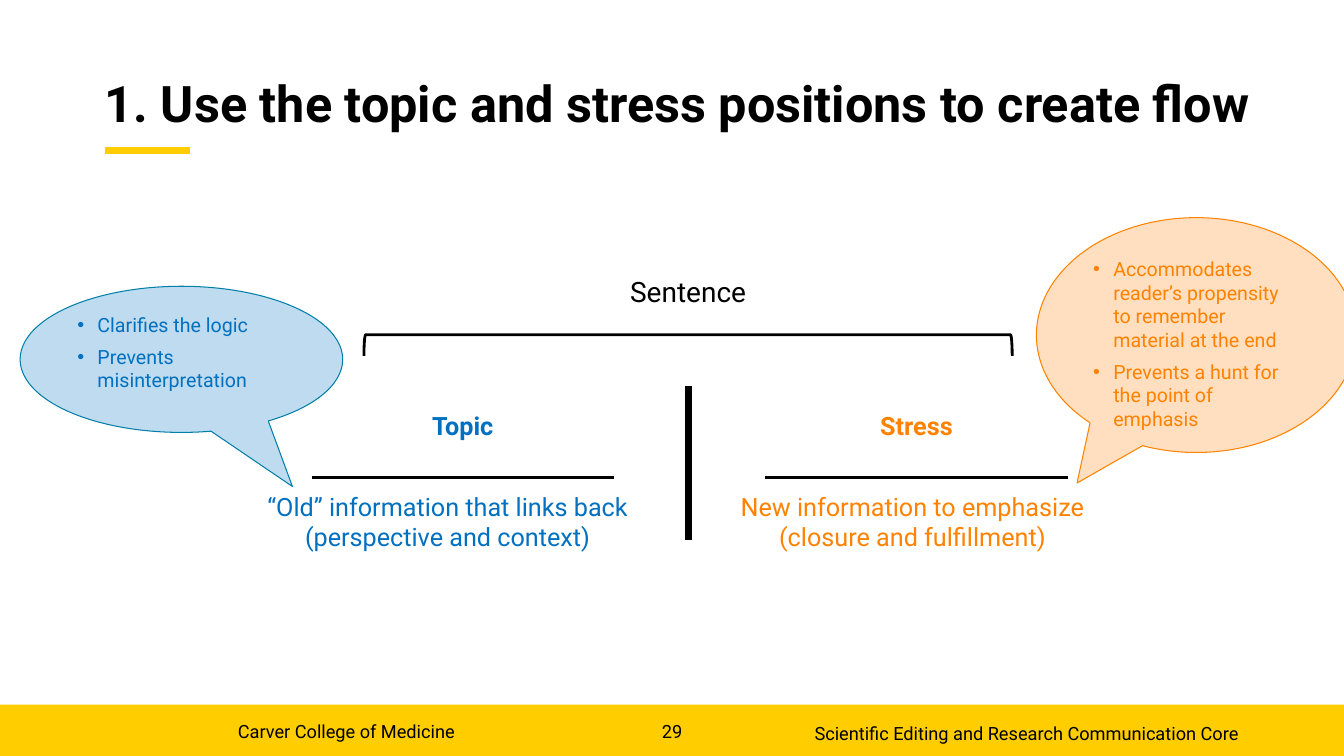
from lxml.etree import SubElement as Sub
from pptx import Presentation
from pptx.dml.color import RGBColor
from pptx.enum.shapes import MSO_CONNECTOR as Conn, MSO_SHAPE as Shape
from pptx.enum.text import MSO_ANCHOR as Anchor, MSO_AUTO_SIZE as Auto, PP_ALIGN as Align
from pptx.oxml.ns import qn
from pptx.util import Pt

PX = 9144
BLACK = RGBColor(0x00, 0x00, 0x00)
GOLD = RGBColor(0xFF, 0xCD, 0x00)
BLUE = RGBColor(0x00, 0x70, 0xC0)
TEAL = RGBColor(0x00, 0x7F, 0xA8)
ORANGE = RGBColor(0xFF, 0x82, 0x00)


def write(frame, lines, size, color, align=Align.LEFT, bold=False, bullet=False):
    frame.word_wrap = True
    for i, line in enumerate(lines):
        para = frame.add_paragraph() if i else frame.paragraphs[0]
        para.alignment = align
        if bullet:
            para.space_after = Pt(6)
            props = para._p.get_or_add_pPr()
            props.set("marL", str(20 * PX))
            props.set("indent", str(-20 * PX))
            tint = Sub(props, qn("a:buClr"))
            Sub(tint, qn("a:srgbClr"), val=str(color))
            Sub(props, qn("a:buFont"), typeface="Arial")
            Sub(props, qn("a:buChar"), char="•")
        run = para.add_run()
        run.text = line
        font = run.font
        font.name, font.size, font.bold = "Roboto", Pt(size), bold
        font.color.rgb = color


def rule(x1, y1, x2, y2, color, width):
    line = slide.shapes.add_connector(Conn.STRAIGHT, x1 * PX, y1 * PX, x2 * PX, y2 * PX)
    line.line.color.rgb = color
    line.line.width = Pt(width)
    Sub(line._element.spPr, qn("a:effectLst"))


deck = Presentation()
deck.slide_width, deck.slide_height = 1333 * PX, 750 * PX
slide = deck.slides.add_slide(deck.slide_layouts[5])

band = slide.shapes.add_shape(Shape.RECTANGLE, 0, 699 * PX, 1333 * PX, 51 * PX)
band.shadow.inherit = False
band.fill.solid()
band.fill.fore_color.rgb = GOLD
band.line.fill.background()

title = slide.shapes.title
title.left, title.top, title.width, title.height = 104 * PX, 58 * PX, 1159 * PX, 95 * PX
frame = title.text_frame
frame.auto_size = Auto.NONE
frame.vertical_anchor = Anchor.MIDDLE
frame.margin_left = frame.margin_right = frame.margin_top = frame.margin_bottom = 0
write(frame, ["1. Use the topic and stress positions to create flow"], 36, BLACK, bold=True)
frame.paragraphs[0].line_spacing = 0.9
rule(104, 149, 188, 149, GOLD, 5)

footer = [
    (634, 715, 65, "29", Align.CENTER),
    (236, 715, 316, "Carver College of Medicine", Align.LEFT),
    (536, 717, 692, "Scientific Editing and Research Communication Core", Align.RIGHT),
]
for x, y, w, words, align in footer:
    box = slide.shapes.add_textbox(x * PX, y * PX, w * PX, 26 * PX)
    frame = box.text_frame
    frame.margin_left = frame.margin_right = frame.margin_top = frame.margin_bottom = 0
    write(frame, [words], 13, BLACK, align)

labels = [
    (597, 267, 171, 44, ["Sentence"], 20, BLACK, False),
    (396, 402, 126, 40, ["Topic"], 18, BLUE, True),
    (840, 402, 138, 40, ["Stress"], 18, ORANGE, True),
    (215, 482, 458, 71, ["“Old” information that links back", "(perspective and context)"], 18, BLUE, False),
    (692, 482, 426, 71, ["New information to emphasize", "(closure and fulfillment)"], 18, ORANGE, False),
]
for x, y, w, h, lines, size, color, bold in labels:
    box = slide.shapes.add_textbox(x * PX, y * PX, w * PX, h * PX)
    write(box.text_frame, lines, size, color, Align.CENTER, bold)

for x in (309, 759):
    rule(x, 474, x + 300, 474, BLACK, 2)
rule(683, 383, 683, 536, BLACK, 4.5)

brace = slide.shapes.add_shape(Shape.RIGHT_BRACKET, 672 * PX, 21 * PX, 21 * PX, 643 * PX)
brace.rotation = 270
brace.shadow.inherit = False
brace.fill.background()
brace.line.color.rgb = BLACK
brace.line.width = Pt(2)

bubbles = [
    (20, 284, 320, 145, (0.344, 0.87), BLUE, TEAL,
     ["Clarifies the logic", "Prevents misinterpretation"]),
    (1028, 216, 317, 233, (-0.373, 0.63), ORANGE, ORANGE,
     ["Accommodates reader’s propensity to remember material at the end",
      "Prevents a hunt for the point of emphasis"]),
]
for x, y, w, h, tip, color, edge, lines in bubbles:
    bubble = slide.shapes.add_shape(Shape.OVAL_CALLOUT, x * PX, y * PX, w * PX, h * PX)
    bubble.adjustments[0], bubble.adjustments[1] = tip
    bubble.shadow.inherit = False
    bubble.fill.solid()
    bubble.fill.fore_color.rgb = color
    tone = bubble._element.spPr.find(qn("a:solidFill")).find(qn("a:srgbClr"))
    Sub(tone, qn("a:alpha"), val="25000")
    bubble.line.color.rgb = edge
    bubble.line.width = Pt(0.75)
    bubble.text_frame.vertical_anchor = Anchor.TOP
    write(bubble.text_frame, lines, 14, color, bullet=True)

deck.save("out.pptx")
